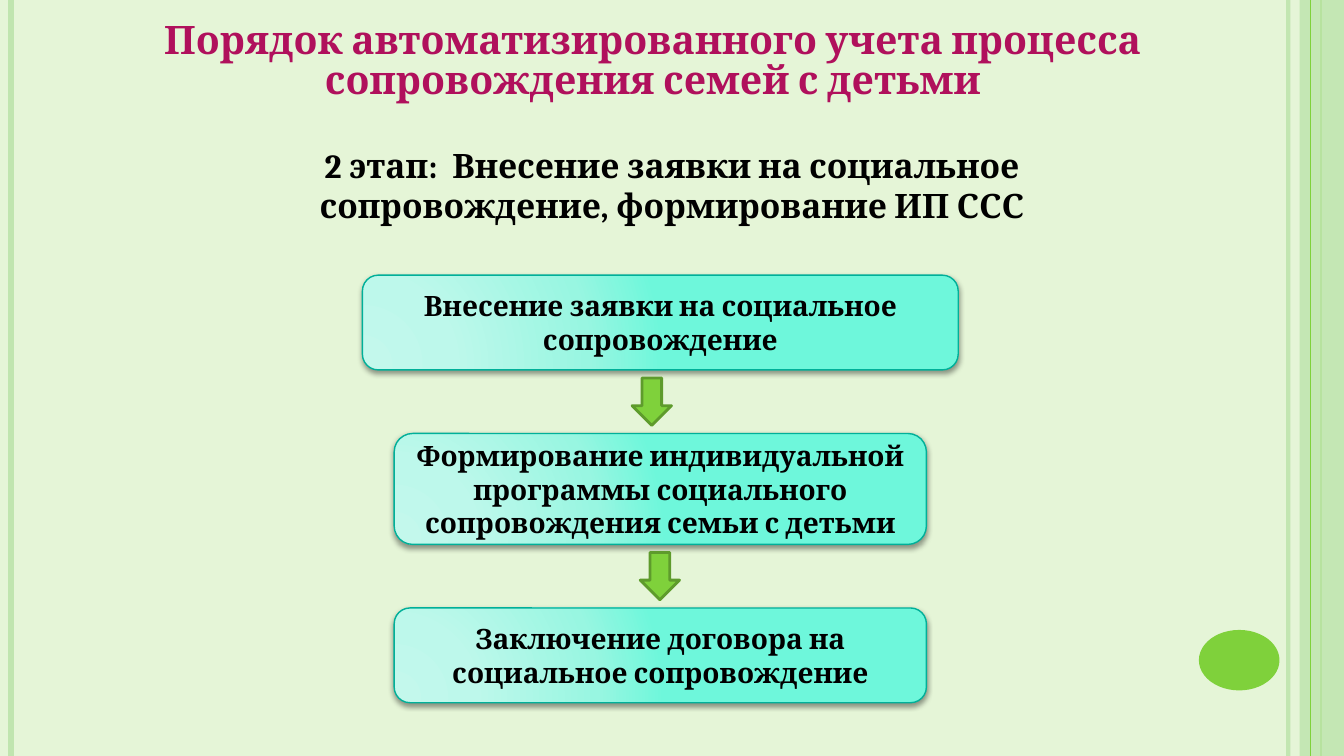
import lxml.etree
import pptx
import pptx.dml.color
import pptx.enum.shapes
import pptx.enum.text
import pptx.oxml
import pptx.oxml.ns
import pptx.util

SHAPES = pptx.enum.shapes.MSO_SHAPE
ANCHOR = pptx.enum.text.MSO_ANCHOR
NAMESPACE = pptx.oxml.ns.nsdecls("a")
BOX_STOPS = [(0, "C3F8EC"), (30, "BDF8EB"), (75, "98F6E1"), (100, "6EF7DB")]


def color(hex_string):
    return pptx.dml.color.RGBColor.from_string(hex_string)


class Canvas:
    font = "Cambria"
    green, pale, dark_green = "7FD13B", "C0E5AF", "5E9B2C"
    teal, black, crimson = "00B099", "000000", "B0105C"

    def __init__(self, deck, background):
        self.width, self.height = deck.slide_width, deck.slide_height
        self.slide = deck.slides.add_slide(deck.slide_layouts[6])
        self.slide.background.fill.solid()
        self.slide.background.fill.fore_color.rgb = color(background)

    def across(self, percent):
        return round(self.width * percent / 100)

    def down(self, percent):
        return round(self.height * percent / 100)

    def place(self, left, top, width, height):
        return self.across(left), self.down(top), self.across(width), self.down(height)

    def set_alpha(self, element, percent):
        rgb = element.find(".//" + pptx.oxml.ns.qn("a:srgbClr"))
        alpha = lxml.etree.SubElement(rgb, pptx.oxml.ns.qn("a:alpha"))
        alpha.set("val", str(percent * 1000))

    def vertical_line(self, left, hex_string, weight, alpha=100):
        x = self.across(left)
        line = self.slide.shapes.add_connector(
            pptx.enum.shapes.MSO_CONNECTOR.STRAIGHT, x, 0, x, self.height)
        line.line.color.rgb = color(hex_string)
        line.line.width = pptx.util.Pt(weight)
        properties = line._element.spPr
        if alpha < 100:
            self.set_alpha(properties, alpha)
        lxml.etree.SubElement(properties, pptx.oxml.ns.qn("a:effectLst"))

    def shape(self, kind, left, top, width, height, fill=None, outline=None, weight=1, alpha=100):
        shape = self.slide.shapes.add_shape(kind, *self.place(left, top, width, height))
        shape.shadow.inherit = False
        if fill:
            shape.fill.solid()
            shape.fill.fore_color.rgb = color(fill)
            if alpha < 100:
                self.set_alpha(shape._element.spPr, alpha)
        if outline:
            shape.line.color.rgb = color(outline)
            shape.line.width = pptx.util.Pt(weight)
        else:
            shape.line.fill.background()
        return shape

    def label(self, shape, text, size, hex_string, anchor, spacing=None):
        frame = shape.text_frame
        frame.text = text
        frame.word_wrap = True
        frame.vertical_anchor = anchor
        para = frame.paragraphs[0]
        para.alignment = pptx.enum.text.PP_ALIGN.CENTER
        if spacing:
            para.line_spacing = pptx.util.Pt(spacing)
        font = para.runs[0].font
        font.name, font.size, font.bold = self.font, pptx.util.Pt(size), True
        font.color.rgb = color(hex_string)

    def heading(self, text, left, top, width, height, size, hex_string, anchor, spacing=None):
        box = self.slide.shapes.add_textbox(*self.place(left, top, width, height))
        self.label(box, text, size, hex_string, anchor, spacing)
        box.text_frame.auto_size = pptx.enum.text.MSO_AUTO_SIZE.SHAPE_TO_FIT_TEXT

    def step(self, text, center, top, width, height):
        box = self.shape(SHAPES.ROUNDED_RECTANGLE, center - width / 2, top, width, height,
                         outline=self.teal)
        stops = "".join(f'<a:gs pos="{position * 1000}"><a:srgbClr val="{stop}"/></a:gs>'
                        for position, stop in BOX_STOPS)
        gradient = pptx.oxml.parse_xml(
            f'<a:gradFill {NAMESPACE} rotWithShape="1"><a:gsLst>{stops}</a:gsLst>'
            '<a:path path="circle"><a:fillToRect l="5000" t="100000" r="120000" b="10000"/>'
            '</a:path></a:gradFill>')
        properties = box._element.spPr
        properties.find(pptx.oxml.ns.qn("a:prstGeom")).addnext(gradient)
        shadow = pptx.oxml.parse_xml(
            f'<a:outerShdw {NAMESPACE} blurRad="{pptx.util.Pt(4)}" dist="{pptx.util.Pt(2)}" '
            f'dir="5400000" rotWithShape="0"><a:srgbClr val="{self.black}">'
            '<a:alpha val="40000"/></a:srgbClr></a:outerShdw>')
        properties.find(pptx.oxml.ns.qn("a:effectLst")).append(shadow)
        self.label(box, text, 20, self.black, ANCHOR.MIDDLE)

    def arrow(self, center, top, width, height):
        self.shape(SHAPES.DOWN_ARROW, center - width / 2, top, width, height,
                   self.green, self.dark_green, 2)


def main():
    deck = pptx.Presentation()
    deck.slide_width, deck.slide_height = pptx.util.Inches(13.33), pptx.util.Inches(7.5)
    page = Canvas(deck, "E5F5D7")

    page.vertical_line(95.85, page.pale, 3, 93)
    page.vertical_line(0.82, page.pale, 4.5)
    page.vertical_line(98.32, page.green, 1.5)
    page.shape(SHAPES.RECTANGLE, 96.7, 0, 3.3, 100, page.pale, alpha=87)
    page.vertical_line(97.5, page.green, 0.75)
    page.shape(SHAPES.OVAL, 89.2, 83.33, 6, 8, page.green)

    page.heading("Порядок автоматизированного учета процесса сопровождения семей с детьми",
                 2.78, 2.13, 91.6, 12.13, 28, page.crimson, ANCHOR.MIDDLE, 29)
    page.heading("2 этап:  Внесение заявки на социальное сопровождение, формирование ИП ССС",
                 20.18, 18.53, 59.64, 12.13, 24, page.black, ANCHOR.TOP)

    steps = [
        ("Внесение заявки на социальное сопровождение", 44.33, 12.53, 48.5),
        ("Формирование индивидуальной программы социального сопровождения семьи с детьми",
         39.6, 14.67, 49.1),
        ("Заключение договора на социальное сопровождение", 39.6, 12.53, None),
    ]
    top, gap, arrow_height = 36.4, 1.07, 6.27
    for text, width, height, arrow_center in steps:
        page.step(text, 49.13, top, width, height)
        top += height + gap
        if arrow_center:
            page.arrow(arrow_center, top, 2.93, arrow_height)
            top += arrow_height + gap

    deck.save("out.pptx")


if __name__ == "__main__":
    main()
